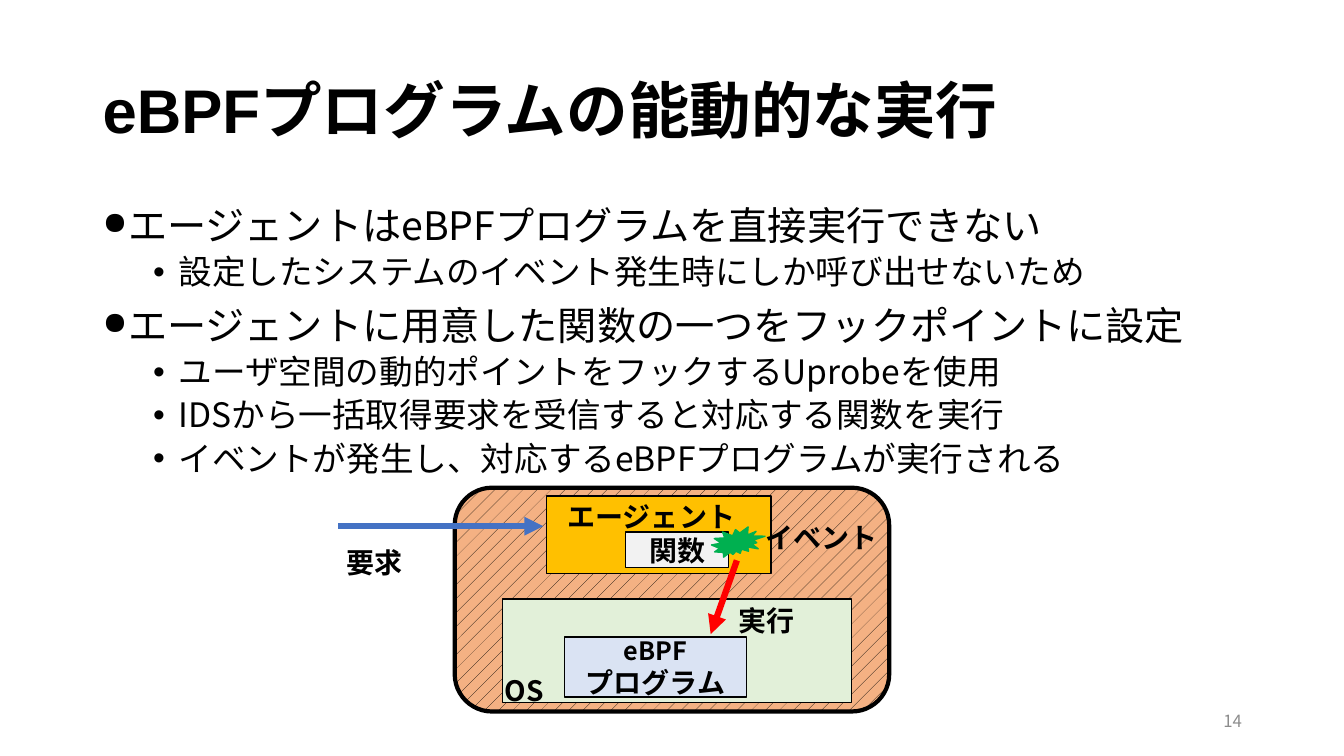
from lxml.etree import SubElement
from pptx import Presentation
from pptx.dml.color import RGBColor
from pptx.enum.dml import MSO_PATTERN
from pptx.enum.shapes import MSO_CONNECTOR, MSO_SHAPE
from pptx.enum.text import MSO_ANCHOR, PP_ALIGN
from pptx.oxml.ns import qn
from pptx.util import Cm, Pt

BLACK = RGBColor(0x00, 0x00, 0x00)
GRAY = RGBColor(0x8C, 0x8C, 0x8C)
ORANGE = RGBColor(0xF4, 0xB1, 0x83)
LIGHT_GREEN = RGBColor(0xE2, 0xF0, 0xD9)
LIGHT_BLUE = RGBColor(0xDA, 0xE3, 0xF3)
AMBER = RGBColor(0xFF, 0xC0, 0x00)
PALE_GRAY = RGBColor(0xF2, 0xF2, 0xF2)
GREEN = RGBColor(0x00, 0xB0, 0x50)
RED = RGBColor(0xFF, 0x00, 0x00)
BLUE = RGBColor(0x44, 0x72, 0xC4)
SANS = "Noto Sans CJK JP"

deck = Presentation()
deck.slide_width, deck.slide_height = Cm(33.87), Cm(19.05)
page = deck.slides.add_slide(deck.slide_layouts[6])


def write_lines(shape, lines, bold=True, color=BLACK, font=SANS, align=PP_ALIGN.LEFT):
    """Fill a shape with one paragraph for each (text, size) pair."""
    frame = shape.text_frame
    frame.text = "\n".join(text for text, size in lines)
    for para, (text, size) in zip(frame.paragraphs, lines):
        para.alignment = align
        span = para.runs[0]
        span.font.size = Pt(size)
        span.font.bold = bold
        span.font.color.rgb = color
        span.font.name = font
        SubElement(span.font._element, qn("a:ea"), typeface=SANS)


def add_text(place, lines, wrap=True, anchor=MSO_ANCHOR.TOP, **style):
    box = page.shapes.add_textbox(*map(Cm, place))
    box.text_frame.word_wrap = wrap
    box.text_frame.vertical_anchor = anchor
    write_lines(box, lines, **style)
    return box


# Title, bullets and page number
title = add_text((2.34, 1.02, 29.21, 3.68), [("eBPFプログラムの能動的な実行", 44)],
                 anchor=MSO_ANCHOR.MIDDLE, font="Arial")
title.text_frame.paragraphs[0].line_spacing = 0.9

bullets = [
    (0, "エージェントはeBPFプログラムを直接実行できない"),
    (1, "設定したシステムのイベント発生時にしか呼び出せないため"),
    (0, "エージェントに用意した関数の一つをフックポイントに設定"),
    (1, "ユーザ空間の動的ポイントをフックするUprobeを使用"),
    (1, "IDSから一括取得要求を受信すると対応する関数を実行"),
    (1, "イベントが発生し、対応するeBPFプログラムが実行される"),
]
body = add_text((2.34, 5.08, 29.21, 12.09),
                [(text, 24 if level else 28) for level, text in bullets], bold=False)
for para, (level, text) in zip(body.text_frame.paragraphs, bullets):
    para.level = level
    para.line_spacing = 0.9
    para.space_before = Pt(5 if level else 10)
    properties = para._p.get_or_add_pPr()
    properties.set("marL", str(Cm(1.91 if level else 0.64)))
    properties.set("indent", str(Cm(-0.64)))
    if level:
        SubElement(properties, qn("a:buFont"), typeface="Arial")
    else:
        SubElement(properties, qn("a:buSzPct"), val="80000")
    SubElement(properties, qn("a:buChar"), char="•" if level else "●")

add_text((23.93, 17.65, 7.62, 1.02), [("14", 12)], anchor=MSO_ANCHOR.MIDDLE,
         bold=False, color=GRAY, align=PP_ALIGN.RIGHT)

# Diagram boxes, from back to front
boxes = [
    (MSO_SHAPE.ROUNDED_RECTANGLE, (11.46, 12.29, 10.95, 5.64), ORANGE, BLACK, 3, []),
    (MSO_SHAPE.RECTANGLE, (12.67, 15.09, 8.79, 2.62), LIGHT_GREEN, BLACK, 1, []),
    (MSO_SHAPE.RECTANGLE, (14.22, 16.05, 4.6, 1.52), LIGHT_BLUE, BLACK, 1,
     [("eBPF", 18), ("プログラム", 20)]),
    (MSO_SHAPE.RECTANGLE, (13.77, 12.5, 5.66, 1.96), AMBER, BLACK, 1, []),
    (MSO_SHAPE.RECTANGLE, (15.77, 13.41, 2.59, 0.89), PALE_GRAY, BLACK, 1, [("関数", 20)]),
    (MSO_SHAPE.EXPLOSION2, (17.93, 13.28, 1.35, 0.76), GREEN, GREEN, 1, []),
]
for kind, place, fill, outline, weight, lines in boxes:
    box = page.shapes.add_shape(kind, *map(Cm, place))
    box.shadow.inherit = False
    if kind == MSO_SHAPE.ROUNDED_RECTANGLE:
        box.fill.patterned()
        box.fill.pattern = MSO_PATTERN.PERCENT_5
        box.fill.fore_color.rgb = BLACK
        box.fill.back_color.rgb = fill
    else:
        box.fill.solid()
        box.fill.fore_color.rgb = fill
    box.line.color.rgb = outline
    box.line.width = Pt(weight)
    if lines:
        box.text_frame.vertical_anchor = MSO_ANCHOR.MIDDLE
        write_lines(box, lines, align=PP_ALIGN.CENTER)

# Request and execution arrows
for ends, color in [((8.53, 13.26, 13.69, 13.26), BLUE), ((18.57, 14.12, 17.91, 15.98), RED)]:
    arrow = page.shapes.add_connector(MSO_CONNECTOR.STRAIGHT, *map(Cm, ends))
    arrow.line.color.rgb = color
    arrow.line.width = Pt(4.5)
    SubElement(arrow.line._get_or_add_ln(), qn("a:tailEnd"), type="triangle")
    SubElement(arrow._element.spPr, qn("a:effectLst"))

# Diagram labels
for text, left, top, width in [
    ("OS", 12.47, 16.84, 1.52),
    ("実行", 18.36, 15.09, 1.93),
    ("エージェント", 14.05, 12.45, 4.9),
    ("要求", 8.48, 13.61, 1.93),
    ("イベント", 19.05, 13, 3.35),
]:
    add_text((left, top, width, 1.12), [(text, 20)], wrap=False)

deck.save("out.pptx")
